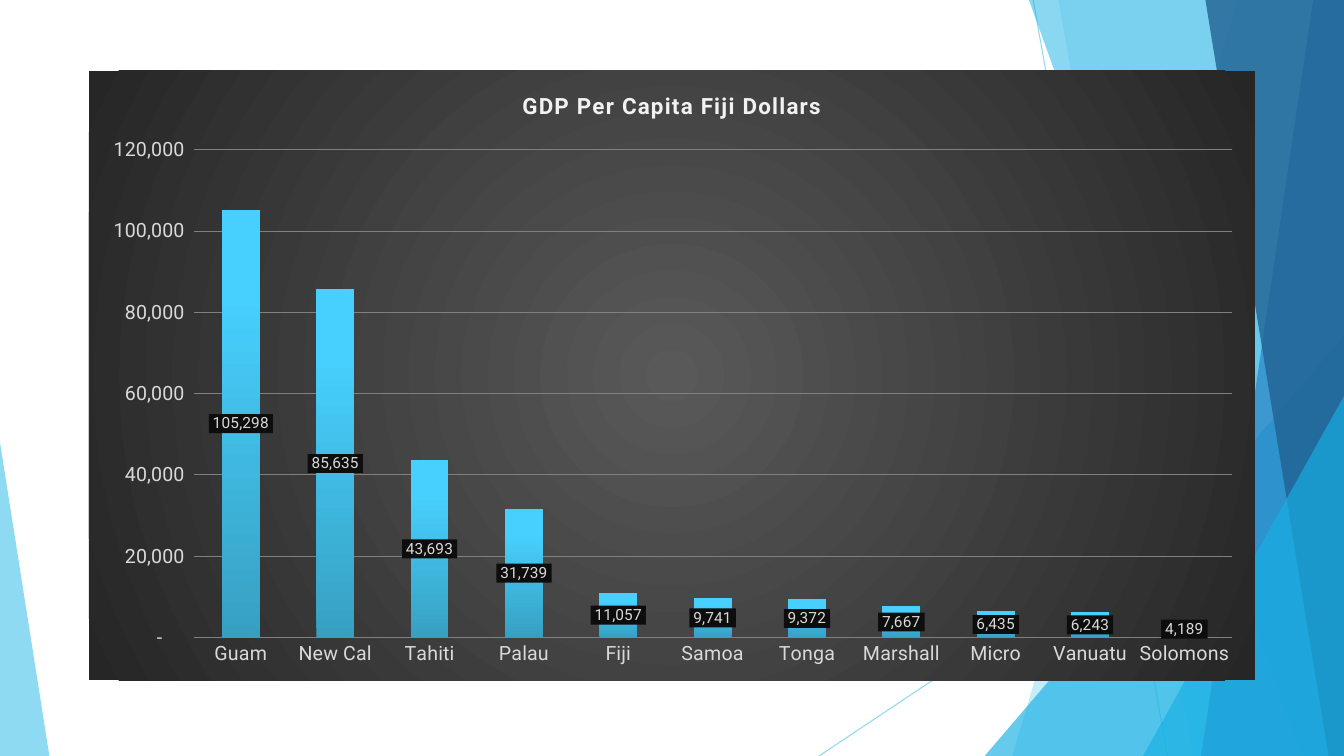
from lxml import etree
from pptx import Presentation
from pptx.chart.data import CategoryChartData
from pptx.dml.color import RGBColor
from pptx.enum.chart import XL_CHART_TYPE, XL_LABEL_POSITION, XL_TICK_MARK
from pptx.enum.shapes import MSO_CONNECTOR, MSO_SHAPE
from pptx.oxml import parse_xml
from pptx.oxml.ns import nsdecls, qn
from pptx.util import Pt

SKY = RGBColor(0x5F, 0xCB, 0xEF)
AZURE = RGBColor(0x17, 0xB0, 0xE4)
BLUE = RGBColor(0x2E, 0x83, 0xC3)
NAVY = RGBColor(0x22, 0x62, 0x92)
WHITE = RGBColor(0xFF, 0xFF, 0xFF)
TITLE = RGBColor(0xF2, 0xF2, 0xF2)
PALE = RGBColor(0xD9, 0xD9, 0xD9)
GRID = RGBColor(0x80, 0x80, 0x80)
LABEL_BG = RGBColor(0x0D, 0x0D, 0x0D)
BACK_INNER = RGBColor(0x59, 0x59, 0x59)
BACK_OUTER = RGBColor(0x26, 0x26, 0x26)
BAR_LOW = RGBColor(0x37, 0xA0, 0xC2)
BAR_MID = RGBColor(0x47, 0xCF, 0xFD)
BAR_TOP = RGBColor(0x46, 0xD1, 0xFF)
FONT = "Roboto"
W, H = 960, 540
NUMBER = '_-* #,##0_-;\\-* #,##0_-;_-* "-"??_-;_-@_'


def set_alpha(sp, percent):
    clr = next(sp._element.spPr.iter(qn("a:srgbClr")))
    etree.SubElement(clr, qn("a:alpha"), val=str(percent * 1000))


def add_text(tf, text, size=14, color=PALE, bold=False, spacing=0):
    r = tf.paragraphs[0].add_run()
    r.text = text
    r.font.name, r.font.size, r.font.bold = FONT, Pt(size), bold
    r.font.color.rgb = color
    r.font._element.set("spc", str(spacing * 100))


prs = Presentation()
prs.slide_width, prs.slide_height = Pt(W), Pt(H)
s = prs.slides.add_slide(prs.slide_layouts[6])
s.background.fill.solid()
s.background.fill.fore_color.rgb = WHITE

# Thin diagonal lines
for ends in [(738, 0, 834, H), (W, 290, 585, H)]:
    line = s.shapes.add_connector(MSO_CONNECTOR.STRAIGHT, *map(Pt, ends))
    line.line.color.rgb = SKY
    line.line.width = Pt(0.75)
    set_alpha(line, 70)
    etree.SubElement(line._element.spPr, qn("a:effectLst"))

# Facets: a panel is (top x, bottom x) up to the right edge,
# a triangle is (left, top, width, height, apex)
facets = [
    ((884.2, 722.9), SKY, 36),
    ((756, 851.8), SKY, 20),
    ((703.4, 239.8, 256.6, 300.2, 1), AZURE, 66),
    ((735.1, 929.5), AZURE, 50),
    ((938.2, 858.2), BLUE, 70),
    ((861.1, 949), NAVY, 80),
    ((816.5, 283, 143.5, 257, 1), AZURE, 66),
    ((0, 316.1, 35.3, 223.9, 0), SKY, 70),
]
for geometry, color, alpha in facets:
    if len(geometry) == 2:
        top_x, bottom_x = geometry
        panel = s.shapes.build_freeform(top_x, 0, scale=Pt(1))
        panel.add_line_segments([(W, 0), (W, H), (bottom_x, H)])
        sp = panel.convert_to_shape()
    else:
        *box, apex = geometry
        sp = s.shapes.add_shape(MSO_SHAPE.ISOSCELES_TRIANGLE, *map(Pt, box))
        sp.adjustments[0] = apex
    sp.fill.solid()
    sp.fill.fore_color.rgb = color
    set_alpha(sp, alpha)
    sp.line.fill.background()
    sp.shadow.inherit = False

# Chart
gdp = {
    "Guam": 105298, "New Cal": 85635, "Tahiti": 43693, "Palau": 31739,
    "Fiji": 11057, "Samoa": 9741, "Tonga": 9372, "Marshall": 7667,
    "Micro": 6435, "Vanuatu": 6243, "Solomons": 4189,
}
data = CategoryChartData()
data.categories = list(gdp)
data.add_series("Series 1", list(gdp.values()))
chart = s.shapes.add_chart(XL_CHART_TYPE.COLUMN_STACKED, Pt(63.4), Pt(50.4),
                           Pt(833), Pt(435.6), data).chart
chart.has_legend = False
chart.font.name, chart.font.size = FONT, Pt(10)
chart.has_title = True
chart.chart_title.include_in_layout = False
add_text(chart.chart_title.text_frame, "GDP Per Capita Fiji Dollars",
         size=16, color=TITLE, bold=True, spacing=1)

for axis in (chart.category_axis, chart.value_axis):
    axis.major_tick_mark = axis.minor_tick_mark = XL_TICK_MARK.NONE
    axis.format.line.fill.background()
    font = axis.tick_labels.font
    font.name, font.size, font.color.rgb = FONT, Pt(14), PALE
axis = chart.value_axis
axis.minimum_scale, axis.maximum_scale, axis.major_unit = 0, 120000, 20000
axis.tick_labels.number_format = NUMBER
axis.tick_labels.number_format_is_linked = False
axis.major_gridlines.format.line.color.rgb = GRID
axis.major_gridlines.format.line.width = Pt(0.75)

plot = chart.plots[0]
plot.gap_width, plot.overlap = 150, 100
plot.vary_by_categories = False
series = plot.series[0]
series.invert_if_negative = False
labels = series.data_labels
labels.show_value = True
labels.position = XL_LABEL_POSITION.CENTER
labels.number_format = NUMBER
labels.number_format_is_linked = False
labels.font.name, labels.font.size, labels.font.color.rgb = FONT, Pt(11), PALE
labels._element.find(qn("c:txPr")).addprevious(parse_xml(
    f'<c:spPr {nsdecls("c", "a")}><a:solidFill><a:srgbClr val="{LABEL_BG}"/>'
    '</a:solidFill><a:ln><a:noFill/></a:ln></c:spPr>'))

# Gradients of the chart background and the columns
space = chart._chartSpace
back = parse_xml(f'<c:spPr {nsdecls("c", "a")}/>')
space.find(qn("c:txPr")).addprevious(back)
bars = series._element.get_or_add_spPr()
radial = ('<a:path path="circle"><a:fillToRect l="50000" t="50000" '
          'r="50000" b="50000"/></a:path>')
gradients = [
    (back, [(0, BACK_INNER), (100, BACK_OUTER)], radial),
    (bars, [(0, BAR_LOW), (80, BAR_MID), (100, BAR_TOP)],
     '<a:lin ang="16200000" scaled="0"/>'),
]
for sppr, stops, direction in gradients:
    gs = "".join(f'<a:gs pos="{pos * 1000}"><a:srgbClr val="{color}"/></a:gs>'
                 for pos, color in stops)
    sppr.append(parse_xml(f'<a:gradFill {nsdecls("a")} rotWithShape="1">'
                          f'<a:gsLst>{gs}</a:gsLst>{direction}</a:gradFill>'))
    sppr.append(parse_xml(f'<a:ln {nsdecls("a")}><a:noFill/></a:ln>'))

# Fixed place of the plot area inside the chart
area = space.find(qn("c:chart")).find(qn("c:plotArea"))
for old in area.findall(qn("c:layout")):
    area.remove(old)
layout = etree.Element(qn("c:layout"))
manual = etree.SubElement(layout, qn("c:manualLayout"))
for tag, val in [("layoutTarget", "inner"), ("xMode", "edge"),
                 ("yMode", "edge"), ("x", 0.09), ("y", 0.13),
                 ("w", 0.89), ("h", 0.8)]:
    etree.SubElement(manual, qn("c:" + tag), val=str(val))
area.insert(0, layout)

prs.save("out.pptx")
